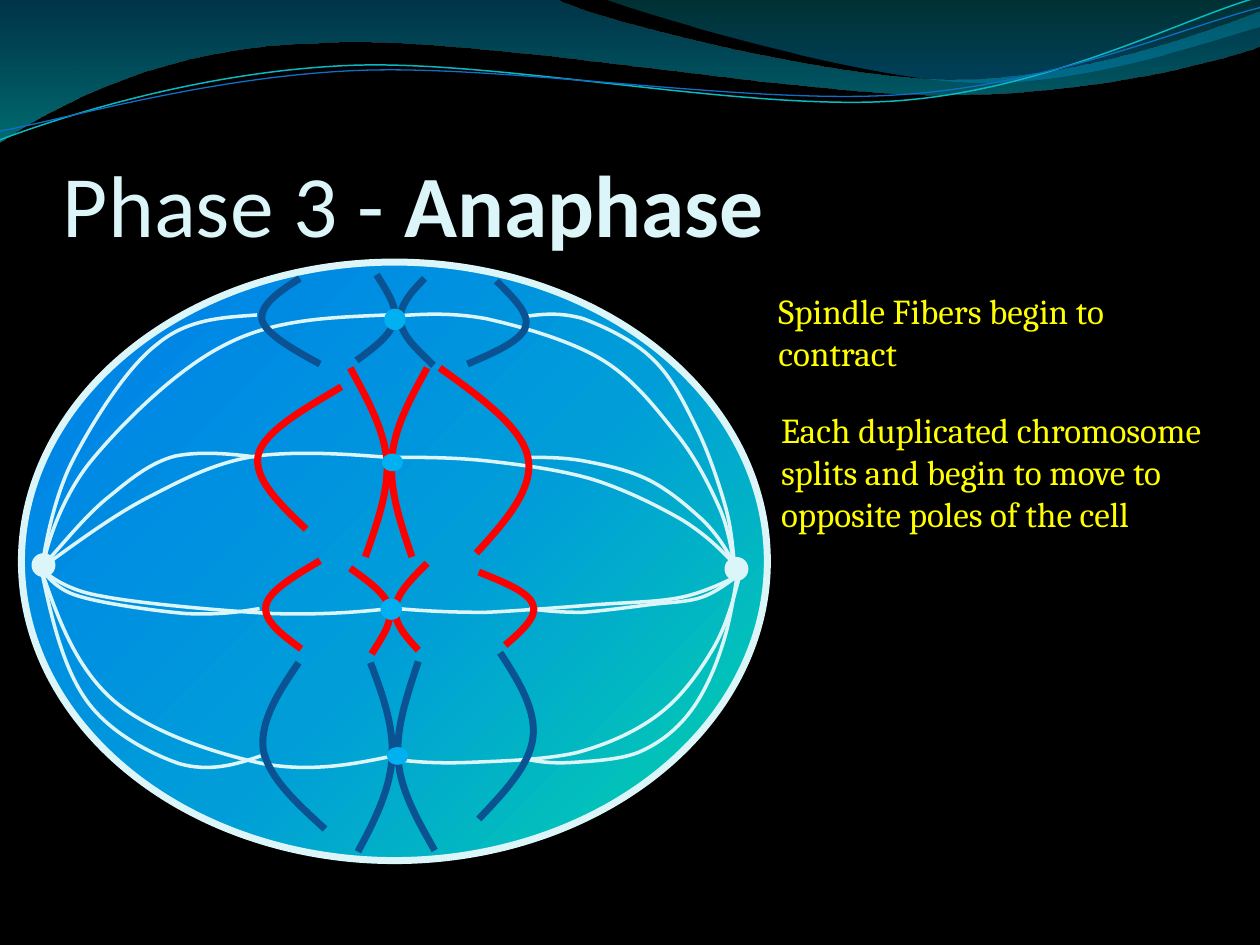
from dataclasses import dataclass

import lxml.etree
import pptx
import pptx.dml.color
import pptx.enum.shapes
import pptx.enum.text
import pptx.oxml
import pptx.oxml.ns
import pptx.util

PX = 9144
PALE, RED, NAVY, SKY, YELLOW = "DBF5F9", "FF0000", "0B5292", "00B0F0", "FFFF00"
Point = tuple[int, int]


@dataclass(frozen=True)
class Stop:
    position: int
    color: str
    alpha: int = 100


@dataclass(frozen=True)
class Chromatid:
    color: str
    points: list[Point]


@dataclass(frozen=True)
class Dot:
    left: int
    top: int
    width: int
    height: int
    color: str


@dataclass(frozen=True)
class Text:
    left: int
    top: int
    width: int
    height: int
    words: str


LINEAR = '<a:lin ang="5400000" scaled="1"/>'
FROM_CORNER = '<a:path path="circle"><a:fillToRect l="100000" t="100000"/></a:path>'

BANDS = [
    ([(0, 0), (440, -1), (440, -1), (440, -1), (476, 17), (664, 63), (758, 63),
      (853, 63), (958, 26), (1000, 9), (1001, 36), (1001, 36), (1001, 36),
      (983, 44), (870, 76), (746, 75), (622, 75), (382, 28), (257, 34),
      (129, 36), (46, 83), (-1, 113)],
     [Stop(0, "0074A1", 45), Stop(100, "00C6CF", 55)]),
    ([(479, -1), (509, 11), (682, 62), (769, 65), (856, 69), (961, 32), (1000, 21),
      (1000, 0), (1000, 0), (1000, 0)],
     [Stop(0, "00A1A9", 30), Stop(80, "008BBF", 45)]),
]
RIPPLES = [
    ("0AB8BF", 0.85, [(0, 111), (48, 93), (158, 57), (277, 52), (395, 47), (593, 89),
                      (713, 80), (833, 71), (938, 15), (998, -2)]),
    ("0F6FC6", 0.75, [(0, 104), (47, 96), (164, 61), (283, 56), (403, 51), (597, 84),
                      (717, 75), (836, 67), (941, 21), (1000, 6)]),
]
LEFT_FIBERS = [
    [(307, 250), (263, 252), (219, 253), (180, 273), (141, 292), (97, 336), (73, 365),
     (49, 394), (37, 433), (35, 446)],
    [(308, 363), (271, 360), (235, 358), (203, 362), (172, 367), (148, 379), (121, 393),
     (93, 407), (66, 427), (38, 447)],
    [(312, 600), (279, 607), (246, 613), (208, 606), (171, 598), (118, 581), (89, 555),
     (60, 529), (46, 491), (33, 453)],
    [(310, 483), (283, 486), (255, 488), (217, 487), (178, 485), (110, 479), (80, 473),
     (50, 468), (36, 454), (36, 454)],
]
RIGHT_FIBERS = [
    [(313, 251), (336, 249), (359, 248), (386, 253), (413, 259), (452, 270), (477, 285),
     (502, 300), (519, 322), (535, 342), (551, 361), (563, 385), (571, 403), (579, 421),
     (581, 441), (583, 449)],
    [(311, 363), (336, 363), (361, 363), (388, 366), (414, 369), (446, 373), (472, 381),
     (497, 389), (523, 402), (542, 413), (561, 425), (573, 437), (585, 450)],
    [(315, 483), (337, 485), (359, 486), (385, 486), (411, 485), (472, 480), (472, 480),
     (498, 478), (522, 478), (541, 474), (560, 470), (579, 460), (584, 458)],
    [(316, 603), (333, 605), (350, 606), (374, 605), (398, 604), (434, 603), (459, 597),
     (484, 590), (506, 580), (524, 566), (542, 552), (556, 532), (567, 513), (577, 495),
     (582, 476), (587, 457)],
]
FIBER_SETS = [(LEFT_FIBERS, 33, 0.625), (RIGHT_FIBERS, 583, 0.61)]

INNER_CHROMATIDS = [
    Chromatid(RED, [(278, 292), (291, 316), (304, 339), (307, 364), (309, 389), (299, 416), (290, 442)]),
    Chromatid(RED, [(339, 292), (326, 316), (313, 339), (311, 364), (309, 389), (318, 416), (327, 442)]),
    Chromatid(NAVY, [(345, 675), (332, 652), (318, 628), (316, 603), (314, 578), (323, 552), (332, 525)]),
    Chromatid(NAVY, [(284, 676), (297, 652), (309, 628), (311, 603), (313, 578), (304, 552), (294, 526)]),
    Chromatid(RED, [(278, 451), (292, 461), (306, 471), (309, 482), (312, 494), (303, 506), (295, 519)]),
    Chromatid(RED, [(339, 447), (327, 459), (315, 471), (314, 482), (312, 494), (322, 505), (332, 516)]),
    Chromatid(NAVY, [(344, 290), (332, 278), (319, 267), (318, 255), (316, 244), (326, 232), (337, 221)]),
    Chromatid(NAVY, [(283, 286), (297, 276), (310, 266), (313, 255), (316, 244), (307, 231), (299, 218)]),
]
OUTER_CHROMATIDS = [
    Chromatid(RED, [(349, 292), (381, 315), (414, 339), (419, 363), (424, 388), (401, 414), (378, 439)]),
    Chromatid(RED, [(271, 307), (241, 325), (210, 342), (205, 361), (201, 380), (222, 400), (243, 420)]),
    Chromatid(NAVY, [(258, 658), (236, 638), (213, 617), (209, 595), (206, 573), (221, 549), (237, 526)]),
    Chromatid(NAVY, [(380, 650), (400, 629), (420, 608), (423, 586), (426, 564), (412, 541), (397, 518)]),
    Chromatid(RED, [(380, 454), (400, 462), (420, 470), (423, 480), (427, 489), (414, 501), (401, 512)]),
    Chromatid(RED, [(254, 445), (234, 457), (213, 469), (211, 481), (209, 493), (224, 504), (239, 515)]),
    Chromatid(NAVY, [(254, 289), (232, 277), (211, 265), (208, 254), (206, 242), (222, 231), (238, 221)]),
    Chromatid(NAVY, [(371, 289), (392, 280), (413, 271), (417, 260), (421, 249), (407, 236), (394, 223)]),
]
POLES = [Dot(25, 439, 19, 19, PALE), Dot(575, 442, 19, 19, PALE)]
CENTROMERES = [Dot(303, 360, 17, 14, SKY), Dot(307, 593, 17, 14, SKY),
               Dot(302, 475, 17, 17, SKY), Dot(305, 245, 17, 17, SKY)]
NOTES = [
    Text(608, 225, 365, 77, "Spindle Fibers begin to contract"),
    Text(610, 319, 365, 145, "Each duplicated chromosome splits and begin to move to opposite poles of the cell"),
]


def rgb(color: str) -> pptx.dml.color.RGBColor:
    return pptx.dml.color.RGBColor.from_string(color)


def set_line(shape, color: str, weight: float) -> None:
    shape.line.color.rgb = rgb(color)
    shape.line.width = pptx.util.Pt(weight)


def set_gradient(shape, stops: list[Stop], direction: str) -> None:
    shape.fill.background()
    marks = "".join(
        f'<a:gs pos="{stop.position * 1000}"><a:srgbClr val="{stop.color}">'
        f'<a:alpha val="{stop.alpha * 1000}"/></a:srgbClr></a:gs>' for stop in stops)
    gradient = pptx.oxml.parse_xml(
        f'<a:gradFill {pptx.oxml.ns.nsdecls("a")} rotWithShape="1">'
        f'<a:gsLst>{marks}</a:gsLst>{direction}</a:gradFill>')
    properties = shape.element.spPr
    properties.replace(properties.find(pptx.oxml.ns.qn("a:noFill")), gradient)


def draw_curve(slide, points: list[Point], close: bool = False):
    builder = slide.shapes.build_freeform(*points[0], scale=PX)
    builder.add_line_segments(points[1:], close=close)
    shape = builder.convert_to_shape()
    shape.shadow.inherit = False
    shape.fill.background()
    segments = shape.element.findall(".//" + pptx.oxml.ns.qn("a:lnTo"))
    for index in range(0, len(segments), 3):
        bezier = lxml.etree.Element(pptx.oxml.ns.qn("a:cubicBezTo"))
        segments[index].addprevious(bezier)
        for segment in segments[index:index + 3]:
            bezier.append(segment[0])
            segment.getparent().remove(segment)
    return shape


def draw_stroke(slide, points: list[Point], color: str, weight: float) -> None:
    set_line(draw_curve(slide, points), color, weight)


def draw_oval(slide, left: int, top: int, width: int, height: int):
    oval = slide.shapes.add_shape(pptx.enum.shapes.MSO_SHAPE.OVAL,
                                  *(value * PX for value in (left, top, width, height)))
    oval.shadow.inherit = False
    return oval


def draw_dots(slide, dots: list[Dot]) -> None:
    for dot in dots:
        oval = draw_oval(slide, dot.left, dot.top, dot.width, dot.height)
        oval.fill.solid()
        oval.fill.fore_color.rgb = rgb(dot.color)
        oval.line.fill.background()


def draw_fibers(slide, fibers: list[list[Point]], pole: int, reach: float) -> None:
    for points in fibers:
        draw_stroke(slide, [(round(pole + (x - pole) * reach), y) for x, y in points], PALE, 2)


def draw_chromatids(slide, chromatids: list[Chromatid]) -> None:
    for chromatid in chromatids:
        draw_stroke(slide, chromatid.points, chromatid.color, 4)


def draw_text(slide, text: Text, size: int, font: str, color: str):
    box = slide.shapes.add_textbox(*(value * PX for value in (text.left, text.top, text.width, text.height)))
    box.text_frame.word_wrap = True
    box.text_frame.text = text.words
    para = box.text_frame.paragraphs[0]
    for span in para.runs:
        span.font.size, span.font.name = pptx.util.Pt(size), font
        span.font.color.rgb = rgb(color)
    return box


def draw_title(slide) -> None:
    box = draw_text(slide, Text(50, 77, 900, 125, "Phase 3 - "), 50, "Calibri", PALE)
    frame = box.text_frame
    frame.vertical_anchor = pptx.enum.text.MSO_ANCHOR.BOTTOM
    frame.margin_left = frame.margin_right = frame.margin_bottom = 0
    span = frame.paragraphs[0].add_run()
    span.text = "Anaphase"
    span.font.size, span.font.name, span.font.bold = pptx.util.Pt(50), "Calibri", True
    span.font.color.rgb = rgb(PALE)


def main() -> None:
    deck = pptx.Presentation()
    deck.slide_width, deck.slide_height = 1000 * PX, 750 * PX
    page = deck.slides.add_slide(deck.slide_layouts[6])
    page.background.fill.solid()
    page.background.fill.fore_color.rgb = rgb("000000")
    for points, stops in BANDS:
        band = draw_curve(page, points, close=True)
        band.line.fill.background()
        set_gradient(band, stops, LINEAR)
    for color, weight, points in RIPPLES:
        draw_stroke(page, points, color, weight)
    draw_title(page)
    cell = draw_oval(page, 17, 208, 592, 475)
    set_gradient(cell, [Stop(0, "03D4A8"), Stop(45, "009DD9"), Stop(85, "0087E6"), Stop(100, "005CBF")], FROM_CORNER)
    set_line(cell, PALE, 4)
    draw_dots(page, POLES)
    for fibers, pole, _ in FIBER_SETS:
        draw_fibers(page, fibers, pole, 1)
    draw_chromatids(page, INNER_CHROMATIDS)
    draw_dots(page, CENTROMERES)
    for fibers, pole, reach in FIBER_SETS:
        draw_fibers(page, fibers, pole, reach)
    draw_chromatids(page, OUTER_CHROMATIDS)
    for note in NOTES:
        draw_text(page, note, 20, "Cambria", YELLOW)
    deck.save("out.pptx")


if __name__ == "__main__":
    main()
